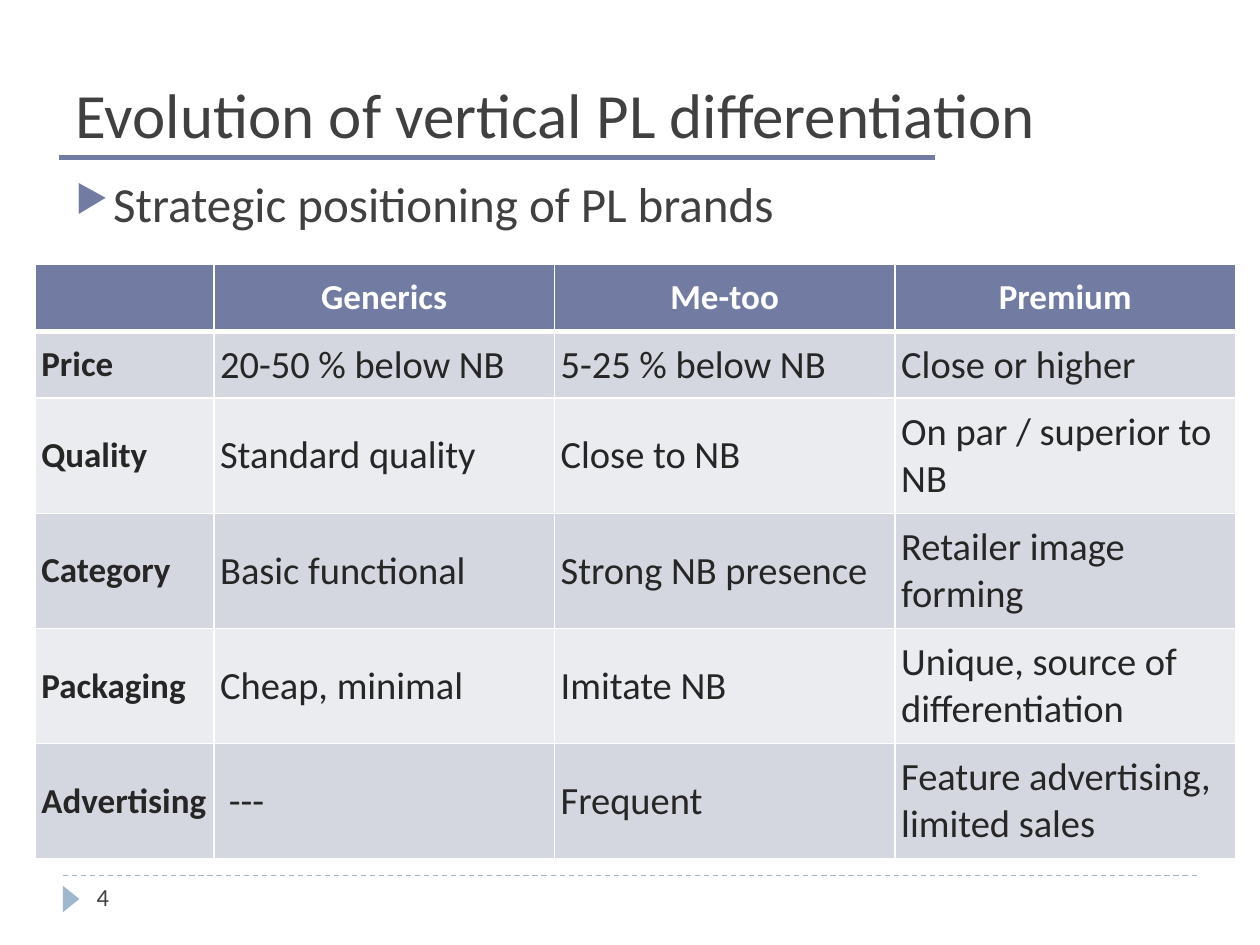
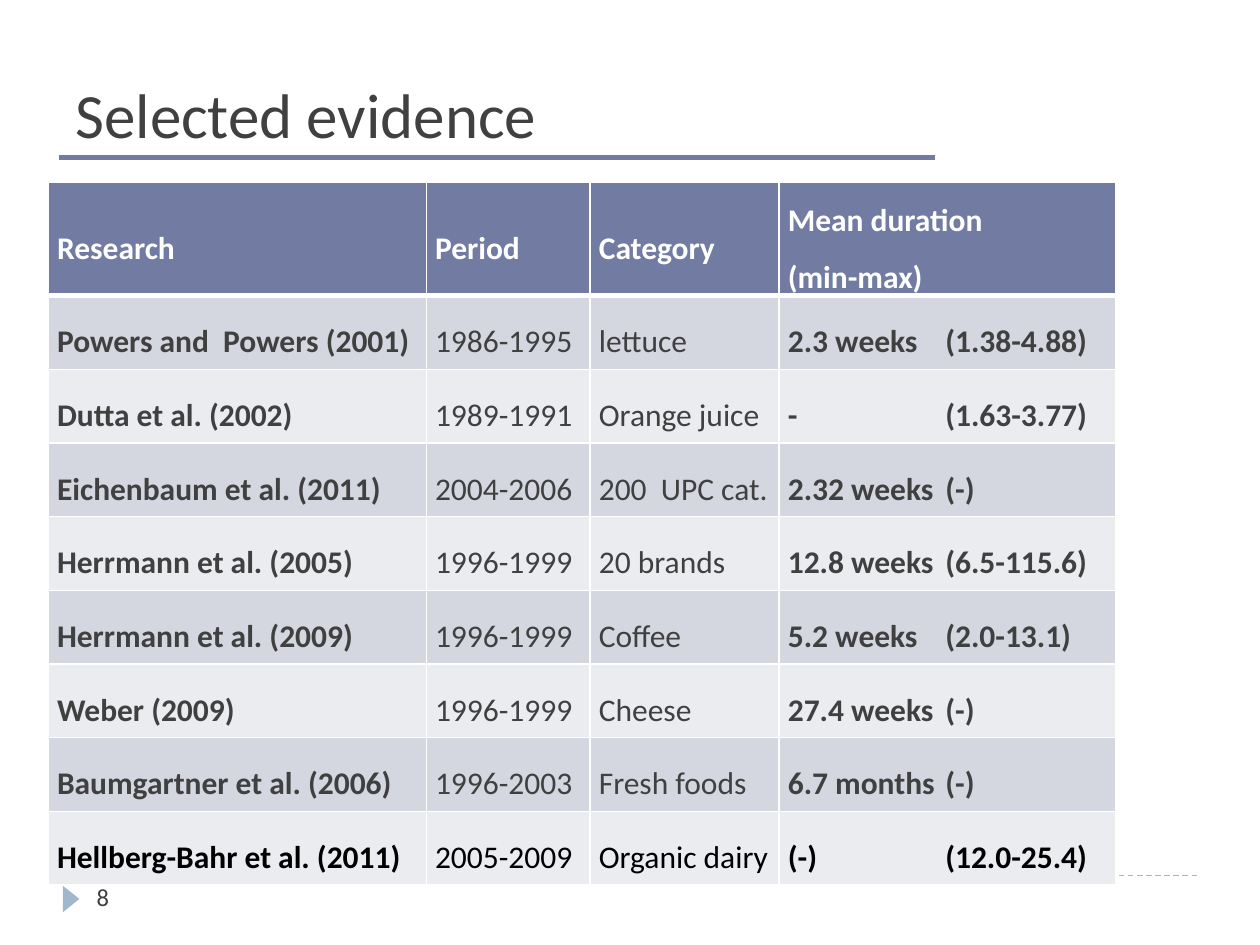
import pptx
import pptx.dml.color
import pptx.enum.dml
import pptx.enum.shapes
import pptx.enum.text
import pptx.oxml.ns
import pptx.util
from lxml import etree

Pt = pptx.util.Pt
qn = pptx.oxml.ns.qn
Anchor = pptx.enum.text.MSO_ANCHOR
Align = pptx.enum.text.PP_ALIGN
Dash = pptx.enum.dml.MSO_LINE

FONT = "Calibri"
INDIGO, SKY, WHITE = "727CA3", "9FB8CD", "FFFFFF"
GREY, NEAR_BLACK, BLACK = "404040", "262626", "000000"
BANDS = ["D5D7E0", "EBECF0"]
DURATION_TAB = 90


def rgb(hex_code):
    return pptx.dml.color.RGBColor.from_string(hex_code)


def add_run(paragraph, text, size, color, bold=False):
    run = paragraph.add_run()
    run.text = text
    run.font.name = FONT
    run.font.size = Pt(size)
    run.font.bold = bold
    run.font.color.rgb = rgb(color)


pages = [
    {
        "title": "Evolution of vertical PL differentiation",
        "bullet": "Strategic positioning of PL brands",
        "number": "4",
        "left": 20, "top": 151.2,
        "columns": [102.2, 194.6, 194.6, 194.6],
        "heights": [38.2, 38.2] + [65.8] * 4,
        "margins": (3.6, 3.6),
        "line_spacing": None,
        "header_align": Align.CENTER,
        "bold_columns": [0], "bold_size": 20, "plain_size": 22,
        "color": NEAR_BLACK, "last_color": NEAR_BLACK,
        "rows": [
            ["", "Generics", "Me-too", "Premium"],
            ["Price", "20-50 % below NB", "5-25 % below NB", "Close or higher"],
            ["Quality", "Standard quality", "Close to NB", "On par / superior to NB"],
            ["Category", "Basic functional", "Strong NB presence", "Retailer image forming"],
            ["Packaging", "Cheap, minimal", "Imitate NB", "Unique, source of differentiation"],
            ["Advertising", " ---", "Frequent", "Feature advertising, limited sales"],
        ],
    },
    {
        "title": "Selected evidence",
        "bullet": None,
        "number": "8",
        "left": 27.6, "top": 104,
        "columns": [216, 93.6, 108, 192.6],
        "heights": [65] + [42.1] * 8,
        "margins": (5, 0),
        "line_spacing": 1.5,
        "header_align": Align.LEFT,
        "bold_columns": [0, 3], "bold_size": 18, "plain_size": 18,
        "color": GREY, "last_color": BLACK,
        "rows": [
            ["Research", "Period", "Category", "Mean duration\n(min-max)"],
            ["Powers and  Powers (2001)", "1986-1995", "lettuce", "2.3 weeks\t(1.38-4.88)"],
            ["Dutta et al. (2002)", "1989-1991", "Orange juice", "-\t(1.63-3.77)"],
            ["Eichenbaum et al. (2011)", "2004-2006", "200  UPC cat.", "2.32 weeks\t(-)"],
            ["Herrmann et al. (2005)", "1996-1999", "20 brands", "12.8 weeks\t(6.5-115.6)"],
            ["Herrmann et al. (2009)", "1996-1999", "Coffee", "5.2 weeks\t(2.0-13.1)"],
            ["Weber (2009)", "1996-1999", "Cheese", "27.4 weeks\t(-)"],
            ["Baumgartner et al. (2006)", "1996-2003", "Fresh foods", "6.7 months\t(-)"],
            ["Hellberg-Bahr et al. (2011)", "2005-2009", "Organic dairy", "(-)\t(12.0-25.4)"],
        ],
    },
]

# left, right, y, colour, width, dash
rules = [
    (36, 684, 500.4, SKY, 0.75, Dash.DASH),
    (33.8, 534.2, 90, INDIGO, 3, Dash.SOLID),
]

presentation = pptx.Presentation()
presentation.slide_width = Pt(720)
presentation.slide_height = Pt(540)

for page in pages:
    slide = presentation.slides.add_slide(presentation.slide_layouts[6])

    # Title rule, footer rule and footer arrow
    for left, right, y, color, width, dash in rules:
        rule = slide.shapes.add_connector(
            pptx.enum.shapes.MSO_CONNECTOR.STRAIGHT, Pt(left), Pt(y), Pt(right), Pt(y))
        rule.line.color.rgb = rgb(color)
        rule.line.width = Pt(width)
        rule.line.dash_style = dash
        etree.SubElement(rule.element.spPr, qn("a:effectLst"))

    arrow = slide.shapes.add_shape(
        pptx.enum.shapes.MSO_SHAPE.ISOSCELES_TRIANGLE, Pt(33.1), Pt(509), Pt(15.1), Pt(9.4))
    arrow.rotation = 90
    arrow.shadow.inherit = False
    arrow.fill.solid()
    arrow.fill.fore_color.rgb = rgb(SKY)
    arrow.line.fill.background()

    # Title, bullet line and slide number: text, box, size, anchor
    texts = [
        (page["title"], (36, 12.2, 648, 77.8), 36, Anchor.BOTTOM),
        (page["bullet"], (36, 95.8, 648, 388.8), 28, Anchor.TOP),
        (page["number"], (48.2, 500.4, 156.2, 28.8), 14, Anchor.TOP),
    ]
    for text, box, size, anchor in texts:
        if text is None:
            continue
        frame = slide.shapes.add_textbox(*[Pt(length) for length in box]).text_frame
        frame.word_wrap = True
        frame.vertical_anchor = anchor
        paragraph = frame.paragraphs[0]
        add_run(paragraph, text, size, GREY)
        if text == page["bullet"]:
            paragraph.space_before = Pt(6)
            properties = paragraph._p.get_or_add_pPr()
            properties.set("marL", str(Pt(21.6)))
            properties.set("indent", str(Pt(-21.6)))
            bullet_color = etree.SubElement(properties, qn("a:buClr"))
            etree.SubElement(bullet_color, qn("a:srgbClr"), val=INDIGO)
            etree.SubElement(properties, qn("a:buSzPct"), val="76000")
            etree.SubElement(properties, qn("a:buChar"), char="▶")

    # Table
    rows, columns, heights = page["rows"], page["columns"], page["heights"]
    table = slide.shapes.add_table(
        len(rows), len(columns), Pt(page["left"]), Pt(page["top"]),
        Pt(sum(columns)), Pt(sum(heights))).table
    for column, width in zip(table.columns, columns):
        column.width = Pt(width)

    for row_index, row in enumerate(rows):
        table.rows[row_index].height = Pt(heights[row_index])
        is_header = row_index == 0
        if is_header:
            fill, color = INDIGO, WHITE
        else:
            fill = BANDS[(row_index - 1) % 2]
            color = page["last_color"] if row_index == len(rows) - 1 else page["color"]

        for column_index, text in enumerate(row):
            cell = table.cell(row_index, column_index)
            cell.vertical_anchor = Anchor.MIDDLE
            side, edge = page["margins"]
            cell.margin_left = cell.margin_right = Pt(side)
            cell.margin_top = cell.margin_bottom = Pt(edge)

            widths = {"lnL": 1, "lnR": 1,
                      "lnT": 3 if row_index == 1 else 1, "lnB": 3 if is_header else 1}
            for name, width in widths.items():
                border = etree.SubElement(
                    cell._tc.get_or_add_tcPr(), qn("a:" + name), w=str(Pt(width)))
                border_fill = etree.SubElement(border, qn("a:solidFill"))
                etree.SubElement(border_fill, qn("a:srgbClr"), val=WHITE)
            cell.fill.solid()
            cell.fill.fore_color.rgb = rgb(fill)

            bold = is_header or column_index in page["bold_columns"]
            size = page["bold_size"] if bold else page["plain_size"]
            for line_index, line in enumerate(text.split("\n")):
                frame = cell.text_frame
                paragraph = frame.add_paragraph() if line_index else frame.paragraphs[0]
                paragraph.alignment = page["header_align"] if is_header else Align.LEFT
                paragraph.line_spacing = page["line_spacing"]
                if "\t" in line:
                    tabs = etree.SubElement(paragraph._p.get_or_add_pPr(), qn("a:tabLst"))
                    etree.SubElement(tabs, qn("a:tab"), pos=str(Pt(DURATION_TAB)), algn="l")
                if line:
                    add_run(paragraph, line, size, color, bold)

presentation.save("out.pptx")
